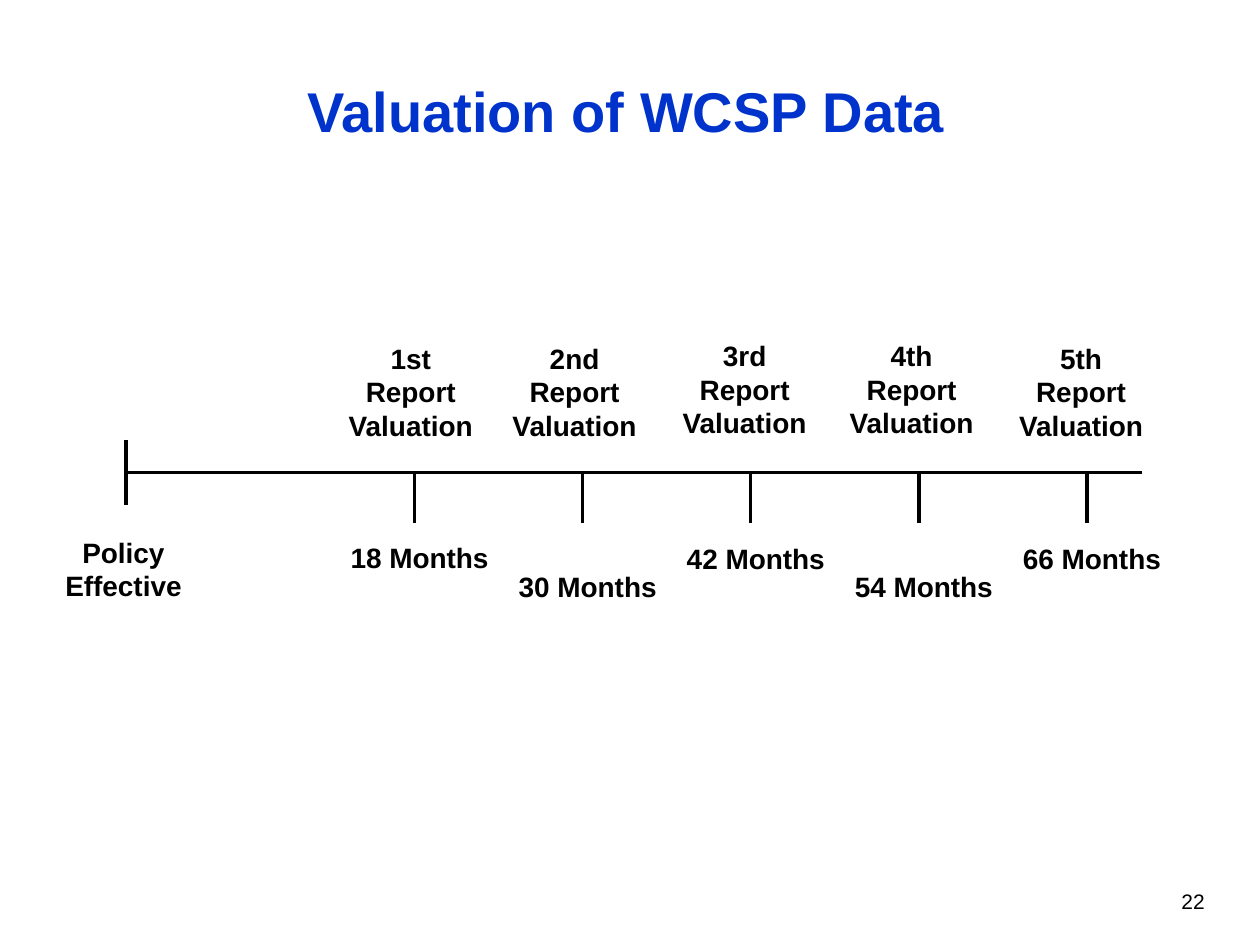
import dataclasses

import pptx
import pptx.dml.color
import pptx.enum.shapes
import pptx.enum.text
import pptx.oxml.ns
import pptx.slide
import pptx.util
from lxml import etree

# The slide is a grid of 100 columns by 75 rows; all lengths count its cells.
CELL = pptx.util.Inches(0.1)
COLUMNS, ROWS = 100, 75

FONT = "Arial"
BLACK = "000000"
BLUE = "0033CC"

AXIS_ROW = 37.5
AXIS_START, AXIS_END = 10.1, 90.6
FIRST_TICK, TICK_STEP = 32.9, 13.34
TICK_TOP, TICK_BOTTOM = 37.6, 41.5
MONTHS_OFFSET = 0.4
LABEL_WIDTH, MONTHS_HEIGHT, VALUATION_HEIGHT = 14.2, 3.6, 9

ALIGN = pptx.enum.text.PP_ALIGN
ANCHOR = pptx.enum.text.MSO_ANCHOR


@dataclasses.dataclass(frozen=True)
class Area:
    left: float
    top: float
    width: float
    height: float


@dataclasses.dataclass(frozen=True)
class Report:
    ordinal: str
    months: int
    valuation_center: float
    valuation_top: float
    months_top: float


REPORTS = [
    Report("1st", 18, 32.6, 26.6, 42.4),
    Report("2nd", 30, 45.6, 26.6, 44.7),
    Report("3rd", 42, 59.1, 26.4, 42.5),
    Report("4th", 54, 72.35, 26.4, 44.7),
    Report("5th", 66, 85.8, 26.6, 42.5),
]


def cells(count: float) -> pptx.util.Emu:
    return pptx.util.Emu(round(count * CELL))


def color(code: str) -> pptx.dml.color.RGBColor:
    return pptx.dml.color.RGBColor.from_string(code)


def centered(center: float, top: float, height: float) -> Area:
    return Area(center - LABEL_WIDTH / 2, top, LABEL_WIDTH, height)


def add_text(slide: pptx.slide.Slide, area: Area, lines: list[str], size: int = 16,
             ink: str = BLACK, bold: bool = True, align: ALIGN = ALIGN.CENTER,
             anchor: ANCHOR = ANCHOR.TOP) -> None:
    box = slide.shapes.add_textbox(cells(area.left), cells(area.top),
                                   cells(area.width), cells(area.height))
    frame = box.text_frame
    frame.word_wrap = True
    frame.vertical_anchor = anchor
    for index, line in enumerate(lines):
        paragraph = frame.add_paragraph() if index else frame.paragraphs[0]
        paragraph.alignment = align
        run = paragraph.add_run()
        run.text = line
        run.font.name = FONT
        run.font.size = pptx.util.Pt(size)
        run.font.bold = bold
        run.font.color.rgb = color(ink)


def add_line(slide: pptx.slide.Slide, start: tuple[float, float],
             end: tuple[float, float]) -> None:
    line = slide.shapes.add_connector(pptx.enum.shapes.MSO_CONNECTOR.STRAIGHT,
                                      *map(cells, start + end))
    line.line.color.rgb = color(BLACK)
    line.line.width = pptx.util.Pt(2)
    etree.SubElement(line._element.spPr, pptx.oxml.ns.qn("a:effectLst"))


def add_report(slide: pptx.slide.Slide, position: int, report: Report) -> None:
    tick = FIRST_TICK + position * TICK_STEP
    add_line(slide, (tick, TICK_TOP), (tick, TICK_BOTTOM))
    add_text(slide, centered(report.valuation_center, report.valuation_top, VALUATION_HEIGHT),
             [report.ordinal, "Report", "Valuation"])
    add_text(slide, centered(tick + MONTHS_OFFSET, report.months_top, MONTHS_HEIGHT),
             [f"{report.months} Months"])


def main() -> None:
    deck = pptx.Presentation()
    deck.slide_width, deck.slide_height = cells(COLUMNS), cells(ROWS)
    slide = deck.slides.add_slide(deck.slide_layouts[6])

    add_text(slide, Area(75.8, 70, 20.8, 5), ["22"], size=12, bold=False, align=ALIGN.RIGHT)
    add_text(slide, Area(11.9, 2.5, 75.6, 12.5), ["Valuation of WCSP Data"],
             size=32, ink=BLUE, anchor=ANCHOR.MIDDLE)

    add_line(slide, (AXIS_START, AXIS_ROW), (AXIS_END, AXIS_ROW))
    add_line(slide, (10, 40.1), (10, 34.9))
    add_text(slide, Area(3.9, 42, 11.8, 6.3), ["Policy", "Effective"])
    for position, report in enumerate(REPORTS):
        add_report(slide, position, report)

    deck.save("out.pptx")


if __name__ == "__main__":
    main()
